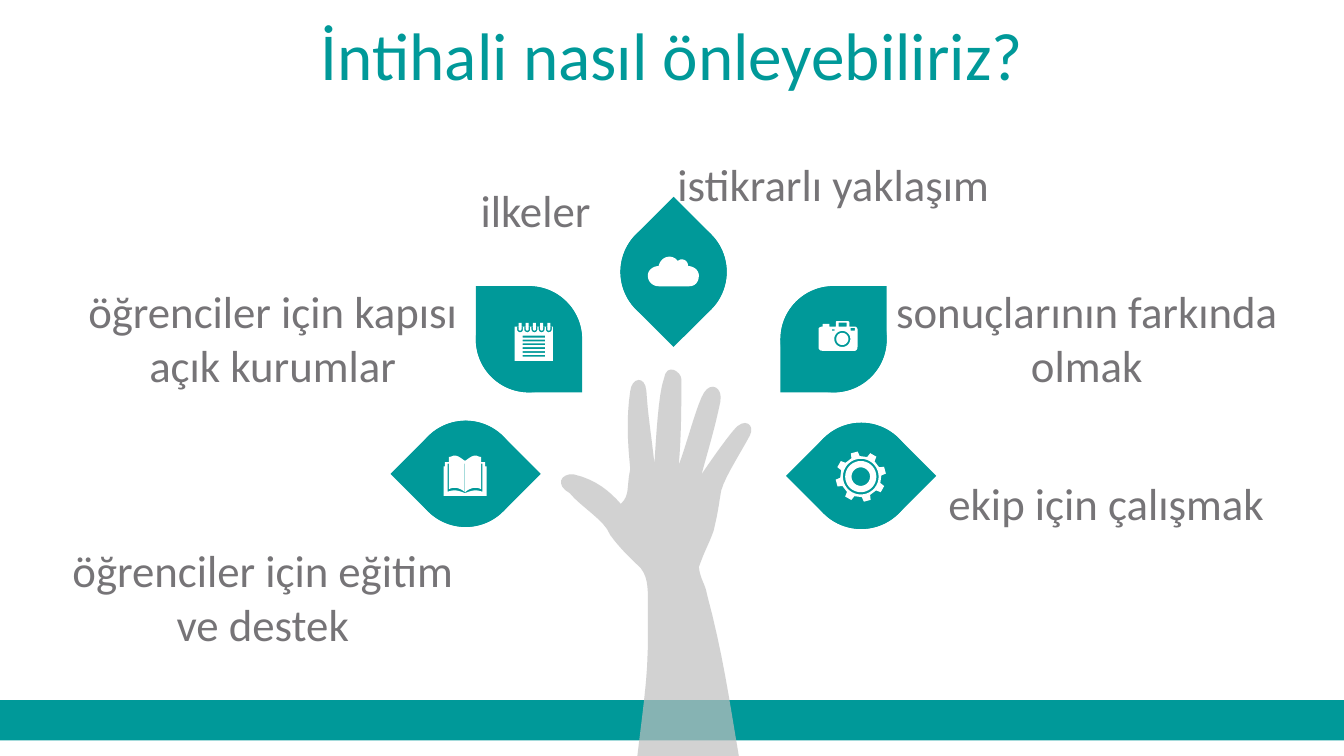
from dataclasses import dataclass
from math import cos, pi, radians, sin

from lxml import etree
from pptx import Presentation
from pptx import util as u
from pptx.dml.color import RGBColor
from pptx.enum import shapes, text
from pptx.oxml import ns

COLOURS = {"teal": "009999", "hand": "BFBFBF", "label": "767477", "white": "FFFFFF"}
GRID = 0.72  # points per unit of the outline coordinates
LEAF_SIZE = 56.9
CURVE_STEPS = 8

Point = tuple[float, float]
Contour = list[Point]


@dataclass
class Leaf:
    left: float
    top: float
    turn: int


@dataclass
class Label:
    wording: str
    left: float
    top: float
    width: float
    height: float = 36
    align: text.PP_ALIGN = text.PP_ALIGN.CENTER
    size: float = 24
    colour: str = "label"
    spacing: float = 1.0
    anchor: text.MSO_ANCHOR = text.MSO_ANCHOR.TOP


LEAVES = [
    Leaf(221, 225.4, 45),
    Leaf(254.9, 153.3, 90),
    Leaf(332.4, 117.2, 135),
    Leaf(418.1, 153.3, 0),
    Leaf(432.9, 226.5, 45),
]

TITLE = Label("İntihali nasıl önleyebiliriz?", 0, 10, 720, 45.4, size=36,
              colour="teal", spacing=0.8, anchor=text.MSO_ANCHOR.MIDDLE)
LABELS = [
    Label("ekip için çalışmak", 501, 251.3, 230.4, align=text.PP_ALIGN.LEFT),
    Label("sonuçlarının farkında olmak", 467, 148.3, 230.4, 65.5),
    Label("ilkeler", 217.4, 94.3, 139),
    Label("öğrenciler için eğitim ve destek", 21.6, 287.3, 238.3, 65.5),
    Label("öğrenciler için kapısı açık kurumlar", 33.1, 148.3, 226, 65.5),
    Label("istikrarlı yaklaşım", 331.2, 80.3, 230.4),
]

# Outlines: M starts a contour, L draws a line, C draws a cubic curve
HAND = """M 474 565 L 550 564 C 542 517 538 487 526 442 C 525 435 521 431 520 422
C 525 408 527 406 531 395 C 534 382 534 381 536 369 C 536 360 550 339 558 324
C 562 316 554 310 546 320 C 540 327 528 344 522 353 C 527 335 532 318 536 299
C 538 288 529 284 524 292 C 519 299 510 334 505 346 C 507 326 507 302 507 282
C 507 277 496 269 494 282 C 490 292 488 328 487 345 C 485 327 482 308 481 291
C 480 279 470 281 469 291 C 466 311 467 329 469 349 C 466 363 469 368 462 375
C 454 366 444 357 427 353 C 417 352 413 361 424 367 C 432 377 450 387 454 398
C 462 409 469 415 477 423 C 483 431 482 441 482 452 C 483 502 480 513 474 565"""
CLOUD = """M 498 191 C 500 191 503 192 504 194 C 505 194 506 193 507 193
C 510 193 512 195 512 198 C 516 198 520 201 520 205 C 520 210 517 213 513 213
L 490 213 C 486 213 482 210 482 205 C 482 201 486 198 490 198
C 491 194 494 191 498 191"""
BOOK_HALF = """M 346 343 C 349 341 351 339 354 339 C 355 339 356 340 358 340
L 358 344 L 361 344 L 361 347 L 362 347 L 362 369 L 346 369
M 346 345 L 346.3 345 L 346.3 366 C 350 363 354 362 358 364 L 358 345
L 359 345 L 359 366 C 354 364 351 365 346 367"""
CAMERA = """M 623 239 L 631 239 C 631 239 632 239 632 240 L 632 243 L 636 243
C 637 243 638 244 638 245 L 638 258 C 638 260 637 261 636 261 L 612 261
C 610 261 609 260 609 258 L 609 245 C 609 244 610 243 612 243 L 612 242
C 612 241 612 241 613 241 L 617 241 C 617 241 617 241 617 242 L 617 243
L 622 243 L 622 240 C 622 239 622 239 623 239"""


def trace(outline: str) -> list[Contour]:
    """Turn an outline into contours, with curves cut into short lines."""
    contours: list[Contour] = []
    tokens = iter(outline.split())
    for command in tokens:
        count = 3 if command == "C" else 1
        points = [(float(next(tokens)), float(next(tokens))) for _ in range(count)]
        if command == "M":
            contours.append(points)
        elif command == "L":
            contours[-1] += points
        else:
            knots = [contours[-1][-1], *points]
            for step in range(1, CURVE_STEPS + 1):
                t = step / CURVE_STEPS
                weights = ((1 - t) ** 3, 3 * t * (1 - t) ** 2, 3 * t * t * (1 - t), t ** 3)
                contours[-1].append((sum(w * k[0] for w, k in zip(weights, knots)),
                                     sum(w * k[1] for w, k in zip(weights, knots))))
    return contours


def polar(x: float, y: float, radius: float, degrees: float) -> Point:
    return x + radius * cos(radians(degrees)), y + radius * sin(radians(degrees))


def circle(x: float, y: float, radius: float) -> Contour:
    return [polar(x, y, radius, angle) for angle in range(0, 360, 10)]


def bar(left: float, top: float, right: float, bottom: float) -> Contour:
    return [(left, top), (right, top), (right, bottom), (left, bottom)]


def notch(x: float, top: float, bottom: float, half: float) -> Contour:
    """Upright slot with a round lower end."""
    arc = [(x + half * cos(pi * i / 8), bottom - half + half * sin(pi * i / 8)) for i in range(9)]
    return [(x - half, top), (x + half, top), *arc]


def book() -> list[Contour]:
    right = trace(BOOK_HALF)
    left = [[(692 - x, y) for x, y in contour] for contour in right]
    return right + left


def notepad() -> list[Contour]:
    lines = [bar(389, 249.8 + 2.85 * i, 405.7, 251.2 + 2.85 * i) for i in range(6)]
    centres = [387 + 5.35 * i for i in range(5)]
    holes = [notch(x, 243, 247.3, 2.2) for x in centres]
    rings = [notch(x, 240.2, 246, 1.1) for x in centres]
    return [bar(383, 243, 411.5, 268.6), *lines, *holes, *rings]


def gear() -> list[Contour]:
    x, y = 640.5, 354.7
    tooth = ((15.3, -12), (18.8, -8), (18.8, 8), (15.3, 12))
    rim = [polar(x, y, radius, 45 * i - 15 + angle) for i in range(8) for radius, angle in tooth]
    return [rim] + [circle(x, y, radius) for radius in (13.3, 11.6, 6.9)]


def camera() -> list[Contour]:
    lens = [circle(626.7, 252.2, radius) for radius in (6, 4.5)]
    marks = [bar(619, 245, 621, 246), bar(633, 244, 636, 246), bar(624, 240, 630, 243)]
    return trace(CAMERA) + lens + marks


def paint(shape, colour: str) -> None:
    shape.shadow.inherit = False
    shape.fill.solid()
    shape.fill.fore_color.rgb = RGBColor.from_string(COLOURS[colour])
    shape.line.fill.background()


def draw_outline(page, contours: list[Contour], colour: str):
    scaled = [[(u.Pt(x * GRID), u.Pt(y * GRID)) for x, y in contour] for contour in contours]
    builder = page.shapes.build_freeform(*scaled[0][0])
    for index, contour in enumerate(scaled):
        if index:
            builder.move_to(*contour[0])
        builder.add_line_segments(contour[1:], close=True)
    shape = builder.convert_to_shape()
    paint(shape, colour)
    return shape


def draw_leaf(page, leaf: Leaf) -> None:
    group = page.shapes.add_group_shape()
    for turn in (leaf.turn, leaf.turn + 180):
        drop = group.shapes.add_shape(shapes.MSO_SHAPE.TEAR, u.Pt(leaf.left), u.Pt(leaf.top),
                                      u.Pt(LEAF_SIZE), u.Pt(LEAF_SIZE))
        drop.rotation = turn
        paint(drop, "teal")


def draw_label(page, label: Label) -> None:
    box = page.shapes.add_textbox(*map(u.Pt, (label.left, label.top, label.width, label.height)))
    para = box.text_frame.paragraphs[0]
    span = para.add_run()
    span.text = label.wording
    formats = [
        (box.text_frame, {"word_wrap": True, "vertical_anchor": label.anchor}),
        (para, {"alignment": label.align, "line_spacing": label.spacing}),
        (span.font, {"name": "Calibri", "size": u.Pt(label.size)}),
        (span.font.color, {"rgb": RGBColor.from_string(COLOURS[label.colour])}),
    ]
    for target, values in formats:
        for name, value in values.items():
            setattr(target, name, value)


def main() -> None:
    deck = Presentation()
    deck.slide_width, deck.slide_height = u.Pt(720), u.Pt(405)
    page = deck.slides.add_slide(deck.slide_layouts[6])

    # Ground band and translucent hand
    band = page.shapes.add_shape(shapes.MSO_SHAPE.RECTANGLE, 0, u.Pt(375.1), u.Pt(720), u.Pt(21.6))
    paint(band, "teal")
    hand = draw_outline(page, trace(HAND), "hand")
    tint = hand.fill._xPr.find(".//" + ns.qn("a:srgbClr"))
    etree.SubElement(tint, ns.qn("a:alpha"), val="70000")

    # Title, leaves and labels
    draw_label(page, TITLE)
    for leaf in LEAVES:
        draw_leaf(page, leaf)
    for label in LABELS:
        draw_label(page, label)

    # Icons on the leaves
    for icon in (book(), trace(CLOUD), notepad(), gear(), camera()):
        draw_outline(page, icon, "white")

    deck.save("out.pptx")


if __name__ == "__main__":
    main()
